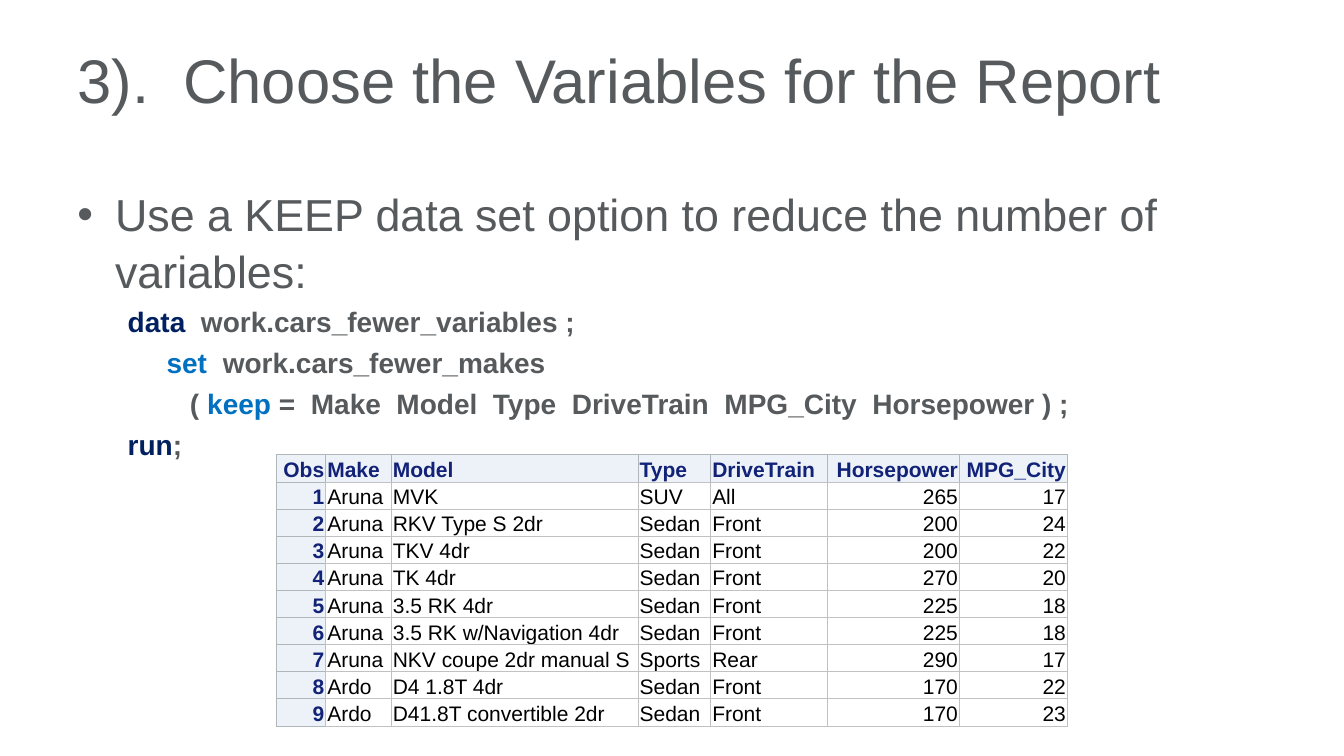
from lxml import etree
from pptx import Presentation
from pptx.dml.color import RGBColor
from pptx.enum.text import MSO_ANCHOR, PP_ALIGN
from pptx.oxml.ns import qn
from pptx.util import Cm, Pt

LEFT, RIGHT = PP_ALIGN.LEFT, PP_ALIGN.RIGHT
TOP, BOTTOM = MSO_ANCHOR.TOP, MSO_ANCHOR.BOTTOM
FONT = "Arial"
COLORS = {
    "text": "565A5C", "step": "002060", "keyword": "0070C0",
    "head": "112277", "head_fill": "EDF2F9", "head_line": "B0B7BB",
    "cell": "000000", "cell_fill": "FFFFFF", "cell_line": "C1C1C1",
}

TITLE = "3).  Choose the Variables for the Report"
BULLET = "Use a KEEP data set option to reduce the number of variables:"
CODE = [
    [("data  ", "step"), ("work.cars_fewer_variables ;", "text")],
    [("     set  ", "keyword"), ("work.cars_fewer_makes", "text")],
    [("        ( ", "text"), ("keep", "keyword"),
     (" =  Make  Model  Type  DriveTrain  MPG_City  Horsepower ) ;", "text")],
    [("run", "step"), (";", "text")],
]

HEADER = ["Obs", "Make", "Model", "Type", "DriveTrain", "Horsepower", "MPG_City"]
CARS = [
    ("Aruna", "MVK", "SUV", "All", 265, 17),
    ("Aruna", "RKV Type S 2dr", "Sedan", "Front", 200, 24),
    ("Aruna", "TKV 4dr", "Sedan", "Front", 200, 22),
    ("Aruna", "TK 4dr", "Sedan", "Front", 270, 20),
    ("Aruna", "3.5 RK 4dr", "Sedan", "Front", 225, 18),
    ("Aruna", "3.5 RK w/Navigation 4dr", "Sedan", "Front", 225, 18),
    ("Aruna", "NKV coupe 2dr manual S", "Sports", "Rear", 290, 17),
    ("Ardo", "D4 1.8T 4dr", "Sedan", "Front", 170, 22),
    ("Ardo", "D41.8T convertible 2dr", "Sedan", "Front", 170, 23),
]
COL_WIDTHS = [1.25, 1.65, 6.22, 1.83, 2.95, 3.32, 2.72]
NUMBER_COLS = {0, 5, 6}


def rgb(name):
    return RGBColor.from_string(COLORS[name])


def add_run(p, text, size, color, bold=False):
    r = p.add_run()
    r.text = text
    r.font.name = FONT
    r.font.size = Pt(size)
    r.font.bold = bold
    r.font.color.rgb = rgb(color)


def add_text_frame(slide, x, y, w, h):
    tf = slide.shapes.add_textbox(Cm(x), Cm(y), Cm(w), Cm(h)).text_frame
    tf.word_wrap = True
    tf.vertical_anchor = TOP
    tf.margin_top = Cm(0.2)
    tf.paragraphs[0].line_spacing = 1.05
    return tf


def add_title(slide, x, y, w, h):
    tf = add_text_frame(slide, x, y, w, h)
    add_run(tf.paragraphs[0], TITLE, 44, "text")


def set_indent(p, left, first):
    pPr = p._p.get_or_add_pPr()
    pPr.set("marL", str(Cm(left)))
    pPr.set("indent", str(Cm(first)))
    return pPr


def add_body(slide, x, y, w, h):
    tf = add_text_frame(slide, x, y, w, h)

    # Bulleted statement
    p = tf.paragraphs[0]
    pPr = set_indent(p, 0.95, -0.95)
    etree.SubElement(pPr, qn("a:buFont"), typeface=FONT)
    etree.SubElement(pPr, qn("a:buChar"), char="•")
    add_run(p, BULLET, 32, "text")

    # Program code
    for line in CODE:
        p = tf.add_paragraph()
        p.level = 1
        p.line_spacing = 1.05
        p.space_before = Pt(4)
        etree.SubElement(set_indent(p, 1.27, 0), qn("a:buNone"))
        for text, color in line:
            add_run(p, text, 20, color, bold=True)


def set_borders(cell, colors):
    tcPr = cell._tc.get_or_add_tcPr()
    for i, (side, color) in enumerate(zip("LRTB", colors)):
        ln = etree.Element(qn(f"a:ln{side}"), w=str(Pt(0.5)))
        fill = etree.SubElement(ln, qn("a:solidFill"))
        etree.SubElement(fill, qn("a:srgbClr"), val=COLORS[color])
        tcPr.insert(i, ln)


def border_colors(row, col):
    """Left, right, top and bottom line colours of a cell."""
    if row == 0:
        return ["head_line"] * 3 + ["cell_line" if col else "head_line"]
    if col == 0:
        return ["head_line", "cell_line", "head_line", "head_line"]
    return ["cell_line"] * 4


def fill_cell(cell, text, row, col):
    kind = "head" if row == 0 or col == 0 else "cell"
    cell.margin_left = cell.margin_right = cell.margin_top = Cm(0.04)
    cell.margin_bottom = 0
    cell.vertical_anchor = BOTTOM
    cell.fill.solid()
    cell.fill.fore_color.rgb = rgb(f"{kind}_fill")
    set_borders(cell, border_colors(row, col))
    p = cell.text_frame.paragraphs[0]
    p.alignment = RIGHT if col in NUMBER_COLS else LEFT
    add_run(p, str(text), 15, kind, bold=kind == "head")


def add_car_table(slide, x, y, w, h):
    rows = [HEADER] + [(obs, *car) for obs, car in enumerate(CARS, 1)]
    table = slide.shapes.add_table(
        len(rows), len(HEADER), Cm(x), Cm(y), Cm(w), Cm(h)).table
    table.first_row = table.horz_banding = False
    for column, width in zip(table.columns, COL_WIDTHS):
        column.width = Cm(width)
    for i, values in enumerate(rows):
        table.rows[i].height = Cm(h / len(rows))
        for j, value in enumerate(values):
            fill_cell(table.cell(i, j), value, i, j)


def main():
    prs = Presentation()
    prs.slide_width, prs.slide_height = Cm(33.87), Cm(19.05)
    slide = prs.slides.add_slide(prs.slide_layouts[6])
    add_title(slide, 1.7, 0.76, 30.48, 3.18)
    add_body(slide, 1.7, 4.45, 30.48, 7.32)
    add_car_table(slide, 6.96, 11.46, sum(COL_WIDTHS), 6.84)
    prs.save("out.pptx")


if __name__ == "__main__":
    main()
